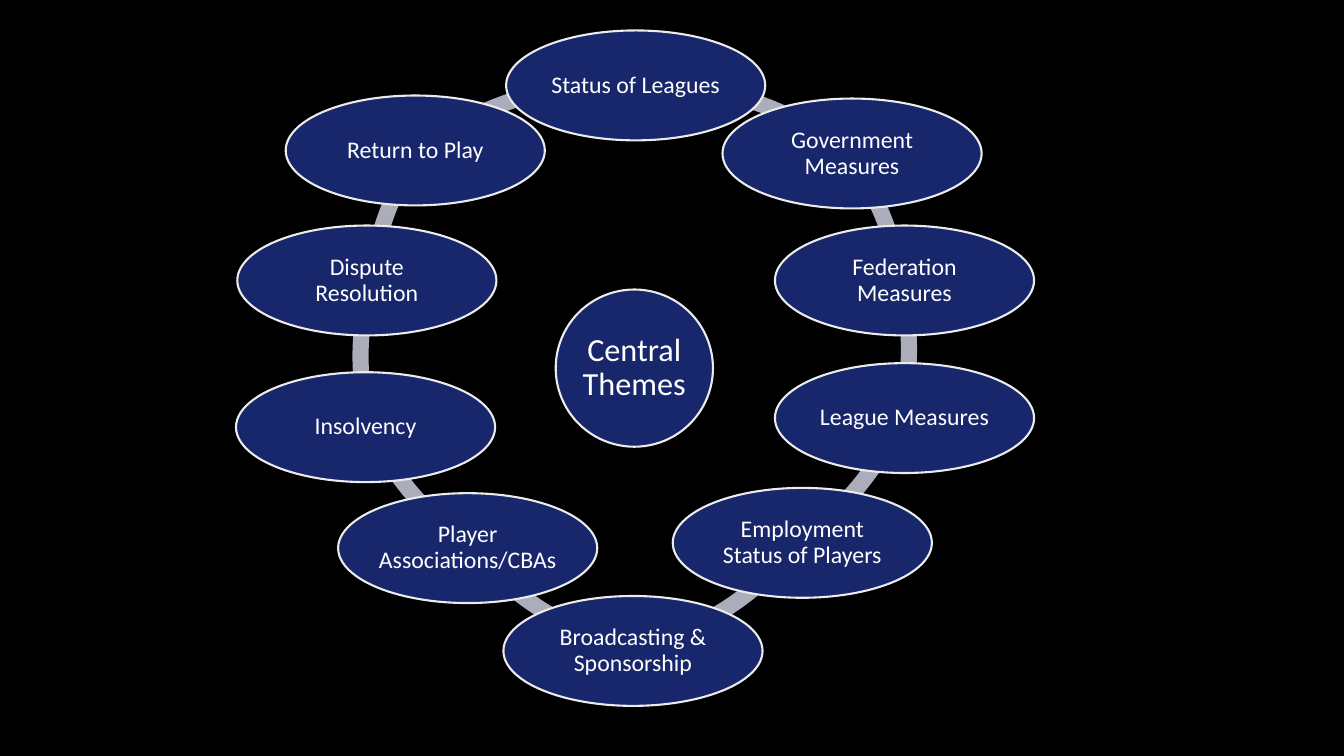
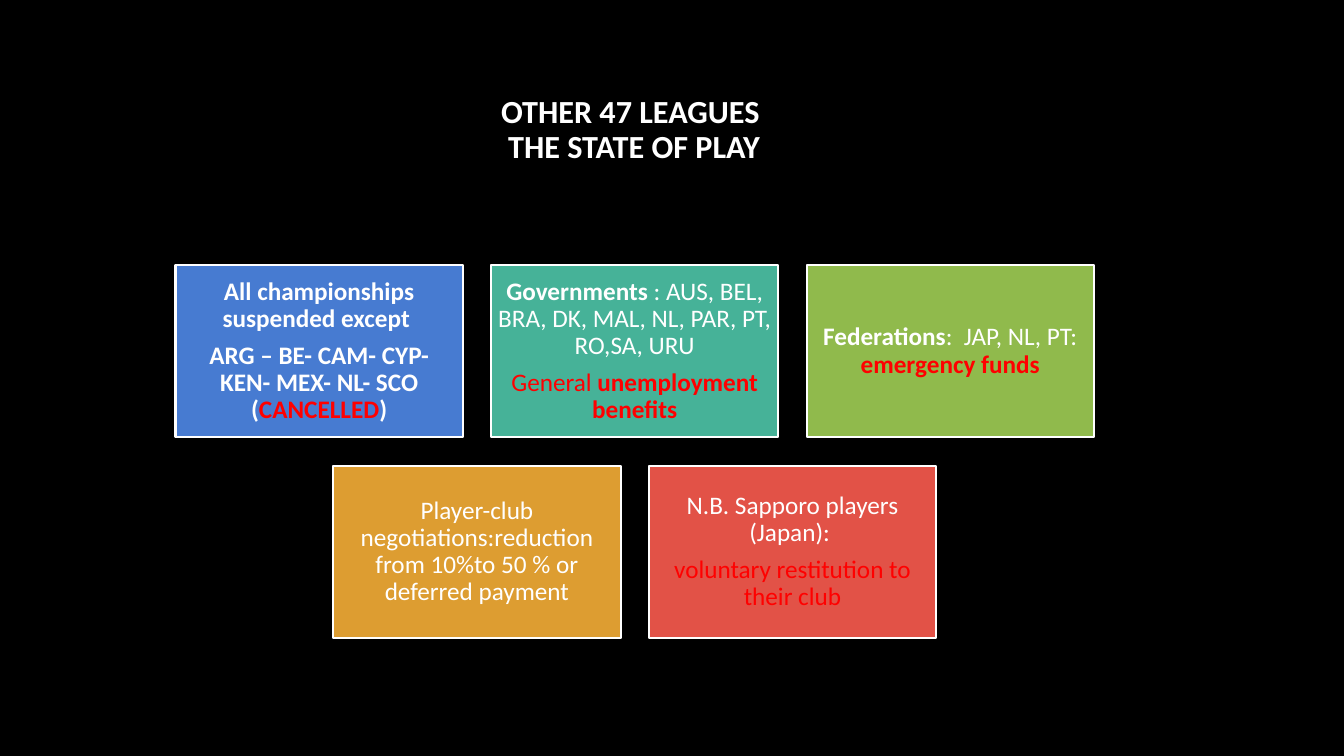
from itertools import pairwise
from math import atan2, degrees, hypot, sqrt

from pptx import Presentation
from pptx.dml.color import RGBColor
from pptx.enum.shapes import MSO_SHAPE as Shape
from pptx.enum.text import MSO_ANCHOR as Anchor, PP_ALIGN as Align
from pptx.util import Inches, Pt

WIDTH, HEIGHT = 13.33, 7.5
FULL_SLIDE = (0, 0, WIDTH, HEIGHT)
FONT = "Calibri"
BLACK, WHITE, RED = "000000", "FFFFFF", "FF0000"
NAVY, PALE, RING = "18276C", "EBEBEB", "ACADBA"

THEMES = [
    ("Status of Leagues", 47.3, 11.3),
    ("Government Measures", 63.4, 20.3),
    ("Federation Measures", 67.3, 37.1),
    ("League Measures", 67.3, 55.3),
    ("Employment Status of Players", 59.7, 71.8),
    ("Broadcasting & Sponsorship", 47.1, 86.1),
    ("Player Associations/CBAs", 34.8, 72.5),
    ("Insolvency", 27.2, 56.5),
    ("Dispute Resolution", 27.3, 37.1),
    ("Return to Play", 30.9, 19.9),
]
HUB = ("Central Themes", 47.2, 48.7)

CARD_ROWS = [
    [
        ("477BD1", [
            [("All championships suspended except ", WHITE, True)],
            [("ARG – BE- CAM- CYP- KEN- MEX- NL- SCO (", WHITE, True),
             ("CANCELLED", RED, True), (")", WHITE, True)],
        ]),
        ("46B298", [
            [("Governments", WHITE, True),
             (" : AUS, BEL, BRA, DK, MAL, NL, PAR, PT, RO,SA, URU", WHITE, False)],
            [("General ", RED, False), ("unemployment benefits", RED, True)],
        ]),
        ("90BA4C", [
            [("Federations", WHITE, True), (":  JAP, NL, PT: ", WHITE, False),
             ("emergency funds", RED, True)],
        ]),
    ],
    [
        ("DD9D31", [
            [("Player-club negotiations:reduction from 10%to 50 % or deferred payment",
              WHITE, False)],
        ]),
        ("E25247", [
            [("N.B. Sapporo players (Japan): ", WHITE, False)],
            [("voluntary restitution to their club", RED, False)],
        ]),
    ],
]


def colour(value):
    return RGBColor.from_string(value)


def add_block(slide, kind, box, fill, line=None):
    shape = slide.shapes.add_shape(kind, *map(Inches, box))
    shape.shadow.inherit = False
    shape.fill.solid()
    shape.fill.fore_color.rgb = colour(fill)
    if line:
        shape.line.color.rgb = colour(line)
        shape.line.width = Pt(1.5)
    else:
        shape.line.fill.background()
    return shape


def write(shape, paragraphs, size, inset):
    frame = shape.text_frame
    frame.word_wrap = True
    frame.vertical_anchor = Anchor.MIDDLE
    frame.margin_left = frame.margin_right = Inches(inset)
    frame.margin_top = frame.margin_bottom = Inches(inset)
    for index, pieces in enumerate(paragraphs):
        paragraph = frame.add_paragraph() if index else frame.paragraphs[0]
        paragraph.alignment = Align.CENTER
        paragraph.line_spacing = 0.9
        if index:
            paragraph.space_before = Pt(7)
        for text, text_colour, bold in pieces:
            run = paragraph.add_run()
            run.text = text
            run.font.name = FONT
            run.font.size = Pt(size)
            run.font.bold = bold
            run.font.color.rgb = colour(text_colour)


def add_title(slide, box, lines):
    title = slide.shapes.add_textbox(*map(Inches, box))
    title.text_frame.text = "\v".join(lines)
    title.text_frame.word_wrap = True
    title.text_frame.vertical_anchor = Anchor.MIDDLE
    paragraph = title.text_frame.paragraphs[0]
    paragraph.alignment = Align.CENTER
    paragraph.line_spacing = 0.9
    for run in paragraph.runs:
        run.font.name = FONT
        run.font.size = Pt(23)
        run.font.bold = True
        run.font.color.rgb = colour(WHITE)


def add_arc(slide, start, end, radius=2.8, band=0.16):
    (x1, y1), (x2, y2) = start, end
    chord = hypot(x2 - x1, y2 - y1)
    rise = sqrt(radius ** 2 - (chord / 2) ** 2) / chord
    x = (x1 + x2) / 2 - (y2 - y1) * rise
    y = (y1 + y2) / 2 + (x2 - x1) * rise
    outer = radius + band / 4
    arc = add_block(slide, Shape.BLOCK_ARC,
                    (x - outer, y - outer, 2 * outer, 2 * outer), RING)
    for index, (px, py) in enumerate((start, end)):
        arc.adjustments[index] = degrees(atan2(py - y, px - x)) % 360 * 0.6
    arc.adjustments[2] = band / (2 * outer)


def add_bubble(slide, centre, size, text, points, inset):
    (x, y), (width, height) = centre, size
    bubble = add_block(slide, Shape.OVAL,
                       (x - width / 2, y - height / 2, width, height), NAVY, PALE)
    write(bubble, [[(text, WHITE, False)]], points, inset)


def add_theme_ring(slide, box):
    left, top, width, height = box

    def centre(theme):
        return left + width * theme[1] / 100, top + height * theme[2] / 100

    centres = [centre(theme) for theme in THEMES]
    for start, end in pairwise(centres + centres[:1]):
        add_arc(slide, start, end)
    add_bubble(slide, centre(HUB), (1.56, 1.56), HUB[0], 23, 0.03)
    for theme, place in zip(THEMES, centres):
        add_bubble(slide, place, (2.57, 1.09), theme[0], 17, 0.02)


def add_cards(slide, box, gap=0.28):
    left, top, width, height = box
    columns = max(map(len, CARD_ROWS))
    card_width = (width - gap * (columns - 1)) / columns
    card_height = (height - gap * (len(CARD_ROWS) - 1)) / len(CARD_ROWS)
    for row, cards in enumerate(CARD_ROWS):
        indent = (columns - len(cards)) * (card_width + gap) / 2
        for column, (fill, paragraphs) in enumerate(cards):
            x = left + indent + column * (card_width + gap)
            y = top + row * (card_height + gap)
            card = add_block(slide, Shape.RECTANGLE,
                             (x, y, card_width, card_height), fill, WHITE)
            write(card, paragraphs, 18, 0.07)


def main():
    presentation = Presentation()
    presentation.slide_width = Inches(WIDTH)
    presentation.slide_height = Inches(HEIGHT)
    background = presentation.slide_master.background.fill
    background.solid()
    background.fore_color.rgb = colour(BLACK)
    blank = presentation.slide_layouts[6]

    add_theme_ring(presentation.slides.add_slide(blank), FULL_SLIDE)

    leagues = presentation.slides.add_slide(blank)
    add_title(leagues, (0.75, 0.67, 11.08, 1.25),
              ["OTHER 47 LEAGUES ", "THE STATE OF PLAY"])
    add_cards(leagues, (1.74, 2.63, 9.11, 3.7))

    presentation.save("out.pptx")


if __name__ == "__main__":
    main()
